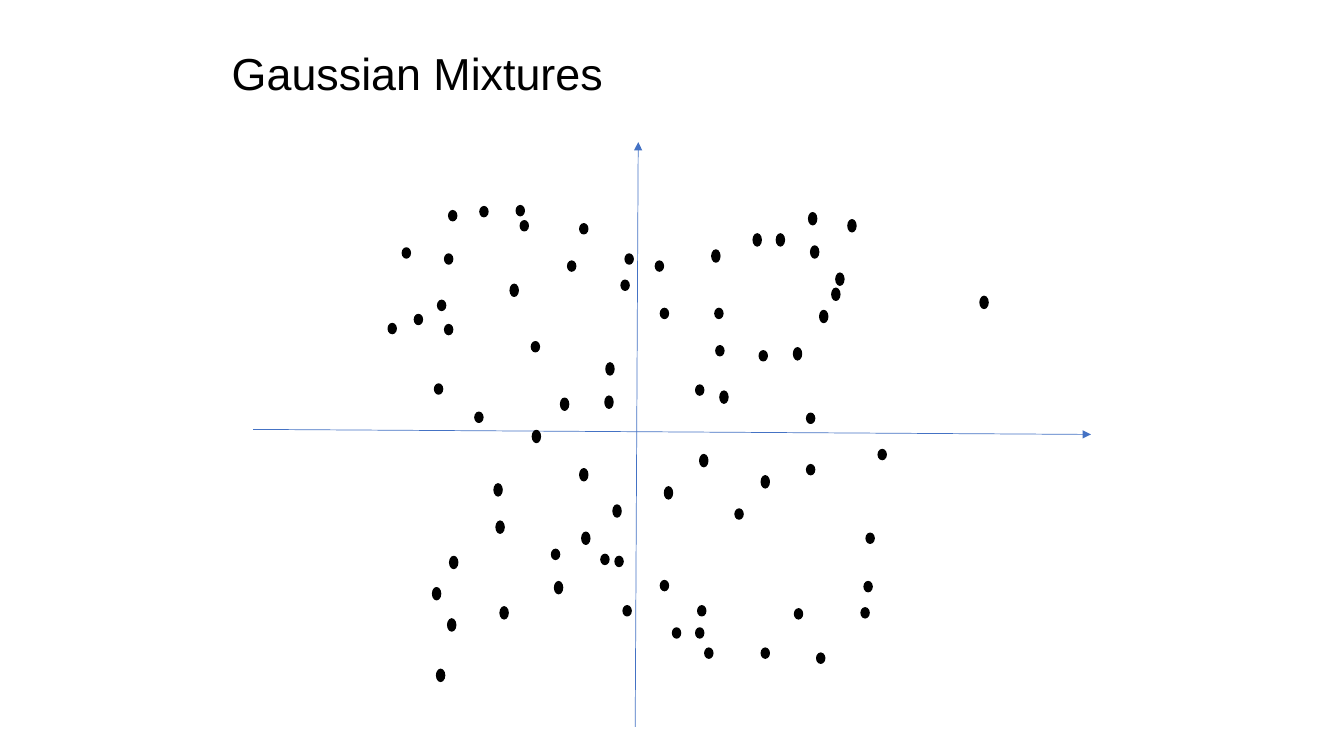
from dataclasses import dataclass

from lxml import etree
from pptx import Presentation
from pptx.dml.color import RGBColor
from pptx.enum.shapes import MSO_CONNECTOR, MSO_SHAPE
from pptx.enum.text import MSO_AUTO_SIZE
from pptx.oxml.ns import qn
from pptx.util import Inches, Pt

STRAIGHT = MSO_CONNECTOR.STRAIGHT
OVAL = MSO_SHAPE.OVAL
GROW = MSO_AUTO_SIZE.SHAPE_TO_FIT_TEXT


@dataclass(frozen=True)
class Theme:
    font: str = "Arial"
    title_size: Pt = Pt(32)
    ink: RGBColor = RGBColor(0x00, 0x00, 0x00)
    axis: RGBColor = RGBColor(0x44, 0x72, 0xC4)
    axis_width: Pt = Pt(0.5)
    dot_width: Pt = Pt(1)


theme = Theme()

# Each axis runs from its tail to its arrowhead: x1, y1, x2, y2
AXES = {
    "vertical": (6.3, 7.21, 6.33, 1.41),
    "horizontal": (2.51, 4.26, 10.82, 4.31),
}

# Width and height of the two kinds of dot
DOT_SIZES = {"short": (0.08, 0.1), "tall": (0.08, 0.12)}

# Observed data: one cluster per quadrant, left and top of each dot, sorted by left
CLUSTERS = {
    "upper left": {
        "short": [
            (3.85, 3.21), (3.99, 2.46), (4.11, 3.12), (4.31, 3.81), (4.34, 2.98),
            (4.41, 2.52), (4.41, 3.22), (4.45, 2.09), (4.71, 4.09), (4.76, 2.05),
            (5.12, 2.04), (5.16, 2.19), (5.27, 3.39), (5.63, 2.59), (5.75, 2.22),
            (6.16, 2.78), (6.2, 2.52),
        ],
        "tall": [(5.06, 2.82), (5.56, 3.95), (6, 3.93), (6.01, 3.6)],
    },
    "upper right": {
        "short": [
            (6.5, 2.59), (6.55, 3.06), (6.9, 3.82), (7.09, 3.06), (7.1, 3.43),
            (7.53, 3.48), (8, 4.1),
        ],
        "tall": [
            (7.06, 2.48), (7.14, 3.88), (7.47, 2.32), (7.7, 2.32), (7.87, 3.45),
            (8.02, 2.11), (8.04, 2.44), (8.13, 3.08), (8.25, 2.86), (8.29, 2.71),
            (8.41, 2.18), (9.72, 2.94),
        ],
    },
    "lower left": {
        "short": [(5.47, 5.45), (5.96, 5.5), (6.1, 5.52), (6.18, 6.01)],
        "tall": [
            (4.29, 5.83), (4.33, 6.64), (4.44, 6.14), (4.46, 5.52), (4.9, 4.8),
            (4.92, 5.17), (4.96, 6.02), (5.28, 4.27), (5.5, 5.77), (5.75, 4.65),
            (5.77, 5.28), (6.08, 5.01),
        ],
    },
    "lower right": {
        "short": [
            (6.55, 5.76), (6.67, 6.23), (6.9, 6.23), (6.92, 6.01), (6.99, 6.43),
            (7.29, 5.05), (7.55, 6.43), (7.88, 6.04), (8, 4.61), (8.1, 6.48),
            (8.54, 6.03), (8.57, 5.77), (8.59, 5.29), (8.71, 4.46),
        ],
        "tall": [(6.59, 4.83), (6.94, 4.51), (7.55, 4.72)],
    },
}


def inches(*lengths):
    return [Inches(length) for length in lengths]


def set_line(shape, color, width):
    shape.line.color.rgb = color
    shape.line.width = width


prs = Presentation()
prs.slide_width, prs.slide_height = inches(13.33, 7.5)
s = prs.slides.add_slide(prs.slide_layouts[6])

# Title
tf = s.shapes.add_textbox(*inches(2.2, 0.4, 9.18, 0.64)).text_frame
tf.word_wrap = True
tf.auto_size = GROW
r = tf.paragraphs[0].add_run()
r.text = "Gaussian Mixtures"
for name, value in {"name": theme.font, "size": theme.title_size}.items():
    setattr(r.font, name, value)
r.font.color.rgb = theme.ink

# Axes
for ends in AXES.values():
    axis = s.shapes.add_connector(STRAIGHT, *inches(*ends))
    set_line(axis, theme.axis, theme.axis_width)
    ln = axis._element.spPr.find(qn("a:ln"))
    etree.SubElement(ln, qn("a:tailEnd"), type="triangle")
    etree.SubElement(axis._element.spPr, qn("a:effectLst"))

# Samples
for cluster in CLUSTERS.values():
    for kind, corners in cluster.items():
        for corner in corners:
            dot = s.shapes.add_shape(OVAL, *inches(*corner, *DOT_SIZES[kind]))
            dot.shadow.inherit = False
            dot.fill.solid()
            dot.fill.fore_color.rgb = theme.ink
            set_line(dot, theme.ink, theme.dot_width)

prs.save("out.pptx")
